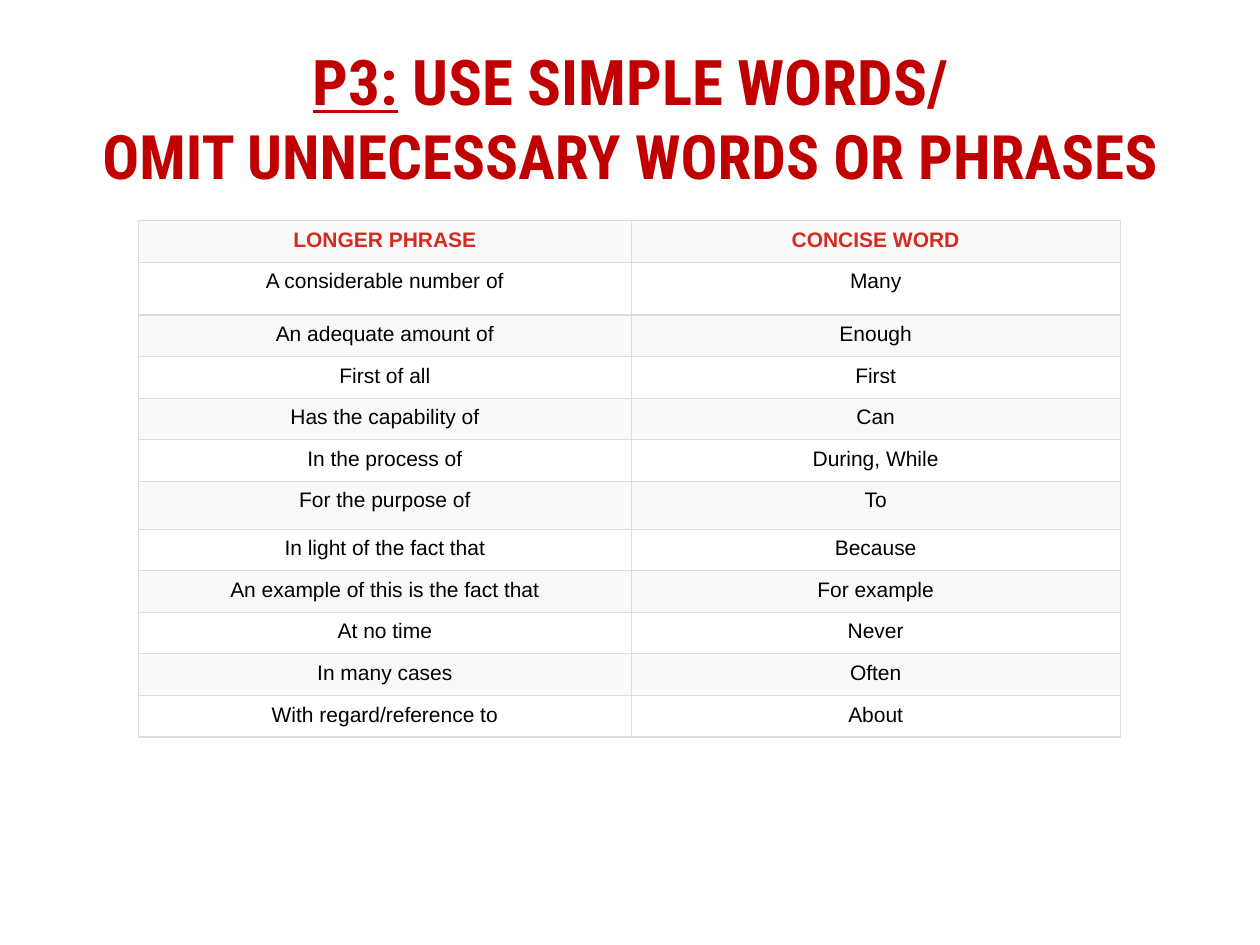
"""Build a slide that pairs longer phrases with concise words."""
from lxml import etree
from pptx import Presentation
from pptx.dml.color import RGBColor
from pptx.enum.text import MSO_ANCHOR, PP_ALIGN
from pptx.oxml.ns import qn
from pptx.util import Inches, Pt

CENTER = PP_ALIGN.CENTER
MIDDLE = MSO_ANCHOR.MIDDLE
TOP = MSO_ANCHOR.TOP

TITLE_RED = RGBColor(0xC0, 0x00, 0x00)
HEADER_RED = RGBColor(0xD5, 0x2B, 0x1E)
BLACK = RGBColor(0x00, 0x00, 0x00)
WHITE = RGBColor(0xFF, 0xFF, 0xFF)
BAND_GRAY = RGBColor(0xF9, 0xF9, 0xF9)
BORDER_GRAY = RGBColor(0xDD, 0xDD, 0xDD)

TITLE_LINES = [
    [("P3:", 36, True), (" USE SIMPLE WORDS/", 36, False)],
    [("OMIT UNNECESSARY WORDS OR PHRASES", 35, False)],
]
PHRASES = [
    ("LONGER PHRASE", "CONCISE WORD"),
    ("A considerable number of", "Many"),
    ("An adequate amount of", "Enough"),
    ("First of all", "First"),
    ("Has the capability of", "Can"),
    ("In the process of", "During, While"),
    ("For the purpose of", "To"),
    ("In light of the fact that", "Because"),
    ("An example of this is the fact that", "For example"),
    ("At no time", "Never"),
    ("In many cases", "Often"),
    ("With regard/reference to", "About"),
]
COLUMN_WIDTHS = (3.91, 3.88)
ROW_HEIGHT = 0.33
TALL_ROWS = {1: 0.42, 6: 0.38}
CELL_MARGIN = 0.06


def add_run(paragraph, text, font_name, size, color, bold):
    run = paragraph.add_run()
    run.text = text
    run.font.name = font_name
    run.font.size = Pt(size)
    run.font.bold = bold
    run.font.color.rgb = color
    return run


def add_borders(cell):
    properties = cell._tc.get_or_add_tcPr()
    for position, side in enumerate(("lnL", "lnR", "lnT", "lnB")):
        line = etree.Element(qn(f"a:{side}"), w=str(Pt(0.75)))
        fill = etree.SubElement(line, qn("a:solidFill"))
        etree.SubElement(fill, qn("a:srgbClr"), val=str(BORDER_GRAY))
        properties.insert(position, line)


def add_title(slide):
    title = slide.shapes.title
    title.left, title.top = Inches(0.25), Inches(0.39)
    title.width, title.height = Inches(9.51), Inches(1.08)
    frame = title.text_frame
    frame.word_wrap = True
    frame.vertical_anchor = MIDDLE
    paragraph = frame.paragraphs[0]
    paragraph.alignment = CENTER
    for index, line in enumerate(TITLE_LINES):
        if index:
            paragraph.add_line_break()
        for text, size, underlined in line:
            run = add_run(paragraph, text, "Roboto Condensed", size, TITLE_RED, True)
            run.font.underline = underlined


def fill_cell(cell, text, row_index):
    is_header = row_index == 0
    cell.margin_left = cell.margin_right = Inches(CELL_MARGIN)
    cell.margin_top = cell.margin_bottom = Inches(CELL_MARGIN)
    cell.vertical_anchor = TOP
    cell.fill.solid()
    cell.fill.fore_color.rgb = WHITE if row_index % 2 else BAND_GRAY
    add_borders(cell)
    paragraph = cell.text_frame.paragraphs[0]
    paragraph.alignment = CENTER
    add_run(paragraph, text, "Arial", 12, HEADER_RED if is_header else BLACK, is_header)


def add_phrase_table(slide):
    heights = [TALL_ROWS.get(index, ROW_HEIGHT) for index in range(len(PHRASES))]
    table = slide.shapes.add_table(
        len(PHRASES), len(COLUMN_WIDTHS), Inches(1.1), Inches(1.75),
        Inches(sum(COLUMN_WIDTHS)), Inches(sum(heights)),
    ).table
    for column, width in zip(table.columns, COLUMN_WIDTHS):
        column.width = Inches(width)
    for row_index, (row, height) in enumerate(zip(table.rows, heights)):
        row.height = Inches(height)
        for cell, text in zip(row.cells, PHRASES[row_index]):
            fill_cell(cell, text, row_index)


def main():
    presentation = Presentation()
    presentation.slide_width = Inches(10)
    presentation.slide_height = Inches(7.5)
    slide = presentation.slides.add_slide(presentation.slide_layouts[5])
    add_phrase_table(slide)
    add_title(slide)
    presentation.save("out.pptx")


if __name__ == "__main__":
    main()
